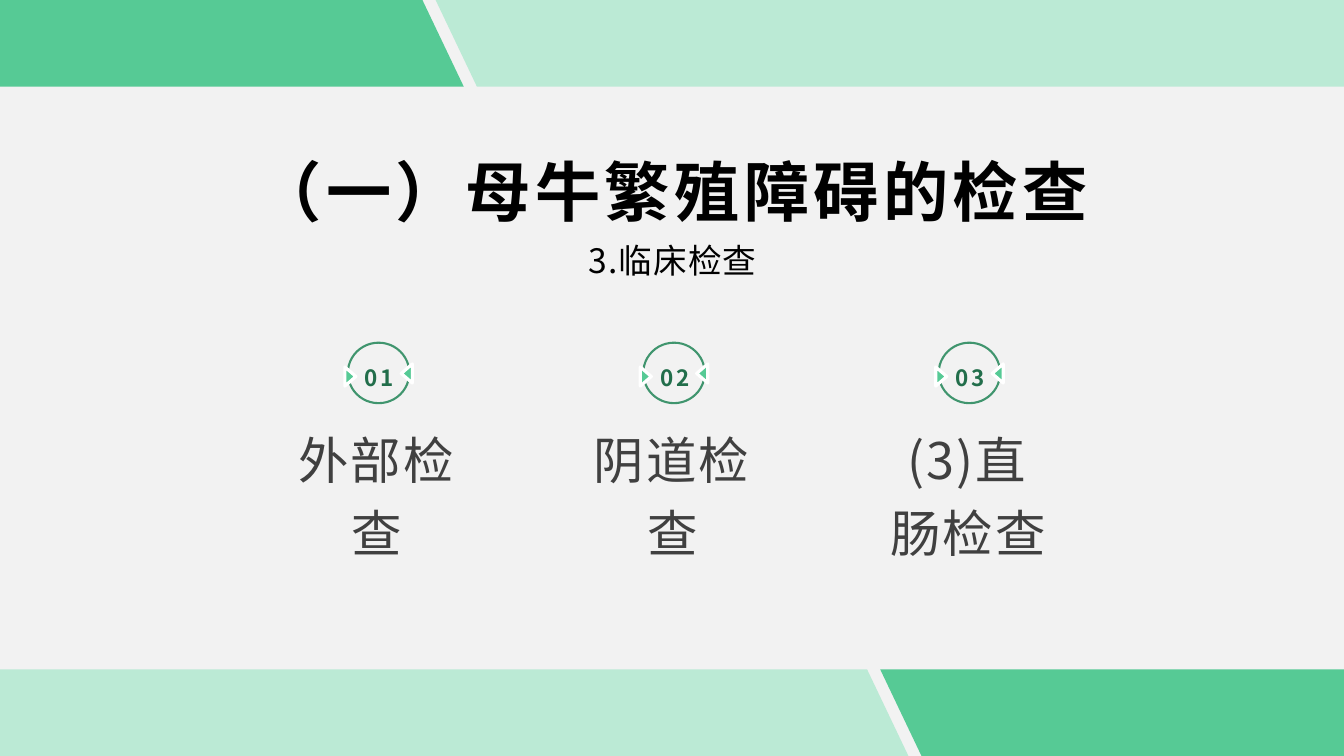
from dataclasses import dataclass

from pptx import Presentation
from pptx import util as u
from pptx.dml.color import RGBColor
from pptx.enum import shapes, text
from pptx.oxml.ns import qn

WIDTH, HEIGHT = 13.33, 7.5
TITLE = "（一）母牛繁殖障碍的检查"
SUBTITLE = "3.临床检查"
EXAMINATIONS = [("01", "外部检查"), ("02", "阴道检查"), ("03", "(3)直肠检查")]
FIRST_LEFT, COLUMN_STEP = 2.79, 2.93
BAND_HEIGHT = 0.86
DARK_BAND = [(0, 0), (4.19, 0), (4.6, BAND_HEIGHT), (0, BAND_HEIGHT)]
LIGHT_BAND = [(4.32, 0), (WIDTH, 0), (WIDTH, BAND_HEIGHT), (4.73, BAND_HEIGHT)]
ARROWS = [(0.59, 3.68, 90), (1.15, 3.65, 270)]


@dataclass(frozen=True)
class Style:
    size: float
    color: str
    spacing: float
    line_spacing: float = 1.0
    bold: bool = False
    anchor: text.MSO_ANCHOR = text.MSO_ANCHOR.TOP
    insets: tuple = (0.07, 0.03)


@dataclass(frozen=True)
class Theme:
    font: str = "Noto Sans CJK SC"
    background: str = "F2F2F2"
    dark: str = "56CA95"
    light: str = "BBEAD5"
    ring: str = "40956E"
    white: str = "FFFFFF"
    title: Style = Style(46.6, "000000", 3.2, 0.9, True, text.MSO_ANCHOR.BOTTOM)
    subtitle: Style = Style(24, "000000", 0.8)
    label: Style = Style(36, "404040", 1.5, 1.2, insets=(0.1, 0.05))
    number: Style = Style(16, "226E4B", 2, 1.5, True, text.MSO_ANCHOR.MIDDLE, (0, 0))


THEME = Theme()


def paint(shape, fill=None, line=None, line_width=1):
    shape.shadow.inherit = False
    if fill:
        shape.fill.solid()
        shape.fill.fore_color.rgb = RGBColor.from_string(fill)
    else:
        shape.fill.background()
    if line:
        shape.line.color.rgb = RGBColor.from_string(line)
        shape.line.width = u.Pt(line_width)
    else:
        shape.line.fill.background()


def add_band(slide, points, color):
    corners = [(u.Inches(x), u.Inches(y)) for x, y in points]
    builder = slide.shapes.build_freeform(*corners[0])
    builder.add_line_segments(corners[1:], close=True)
    paint(builder.convert_to_shape(), color)


def add_text(slide, content, box, style):
    frame = slide.shapes.add_textbox(*map(u.Inches, box)).text_frame
    frame.word_wrap = True
    frame.vertical_anchor = style.anchor
    frame.margin_left = frame.margin_right = u.Inches(style.insets[0])
    frame.margin_top = frame.margin_bottom = u.Inches(style.insets[1])
    frame.text = content
    paragraph = frame.paragraphs[0]
    paragraph.alignment = text.PP_ALIGN.CENTER
    paragraph.line_spacing = style.line_spacing
    font = paragraph.runs[0].font
    font.name = THEME.font
    font.size = u.Pt(style.size)
    font.bold = style.bold
    font.color.rgb = RGBColor.from_string(style.color)
    properties = paragraph.runs[0]._r.get_or_add_rPr()
    properties.set("spc", str(round(style.spacing * 100)))
    east_asian = properties.makeelement(qn("a:ea"), {"typeface": THEME.font})
    properties.find(qn("a:latin")).addnext(east_asian)


def add_examination(slide, left, number, label):
    ring_box = map(u.Inches, (left + 0.66, 3.4, 0.61, 0.6))
    ring = slide.shapes.add_shape(shapes.MSO_SHAPE.OVAL, *ring_box)
    paint(ring, line=THEME.ring, line_width=1.5)
    for offset, top, rotation in ARROWS:
        arrow_box = map(u.Inches, (left + offset, top, 0.19, 0.11))
        arrow = slide.shapes.add_shape(shapes.MSO_SHAPE.ISOSCELES_TRIANGLE, *arrow_box)
        arrow.rotation = rotation
        paint(arrow, THEME.dark, THEME.white, 2.25)
    add_text(slide, label, (left, 4.09, 1.9, 1.51), THEME.label)
    add_text(slide, number, (left + 0.69, 3.47, 0.57, 0.41), THEME.number)


def main():
    presentation = Presentation()
    presentation.slide_width = u.Inches(WIDTH)
    presentation.slide_height = u.Inches(HEIGHT)
    slide = presentation.slides.add_slide(presentation.slide_layouts[6])
    slide.background.fill.solid()
    slide.background.fill.fore_color.rgb = RGBColor.from_string(THEME.background)

    for points, color in ((DARK_BAND, THEME.dark), (LIGHT_BAND, THEME.light)):
        add_band(slide, points, color)
        add_band(slide, [(WIDTH - x, HEIGHT - y) for x, y in points], color)

    add_text(slide, TITLE, (1.17, 1.5, 11, 0.82), THEME.title)
    add_text(slide, SUBTITLE, (1.17, 2.35, 11, 0.48), THEME.subtitle)
    for index, (number, label) in enumerate(EXAMINATIONS):
        add_examination(slide, FIRST_LEFT + index * COLUMN_STEP, number, label)

    presentation.save("out.pptx")


if __name__ == "__main__":
    main()
